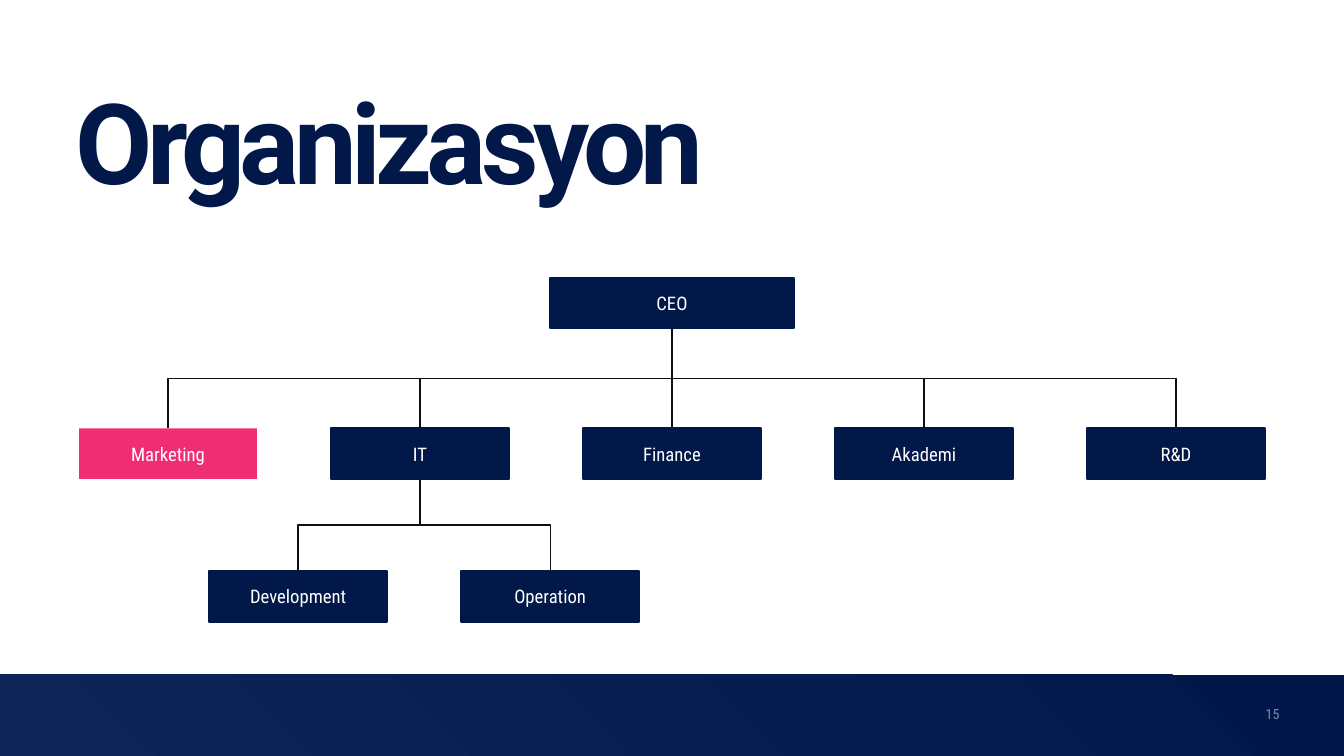
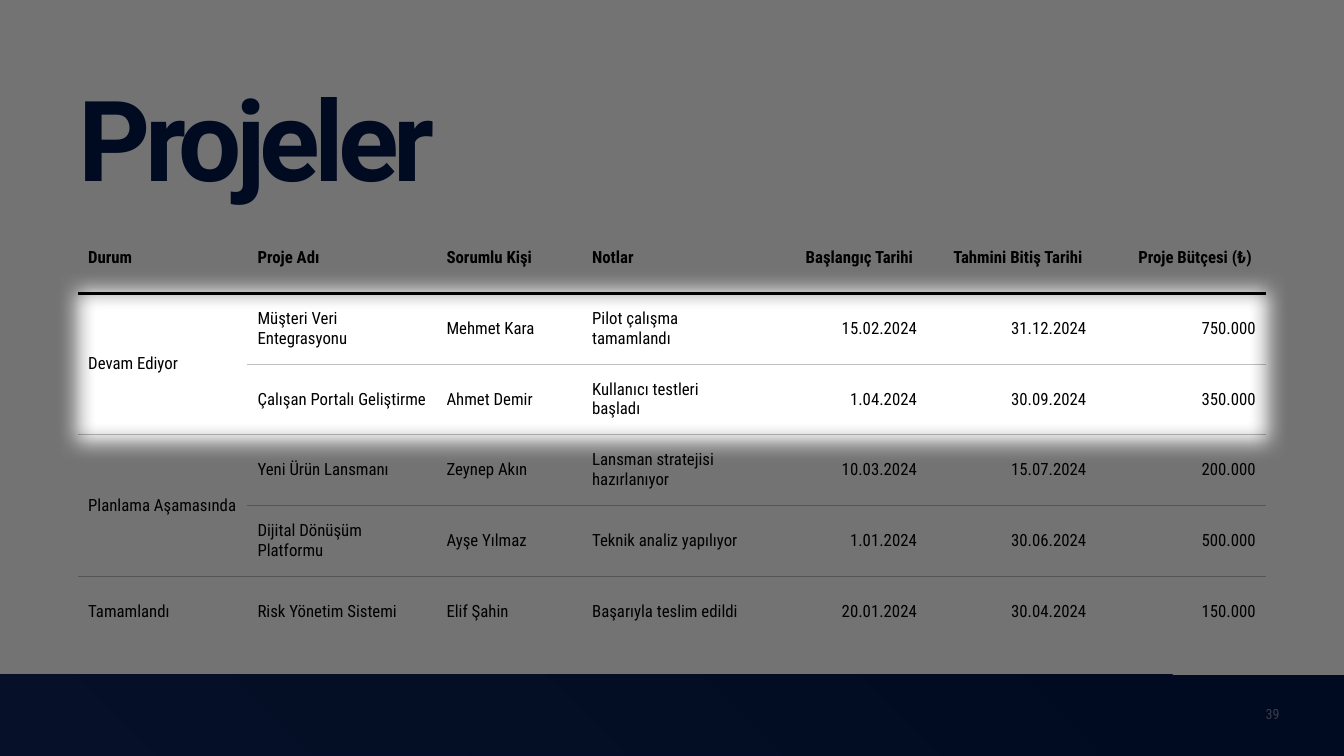
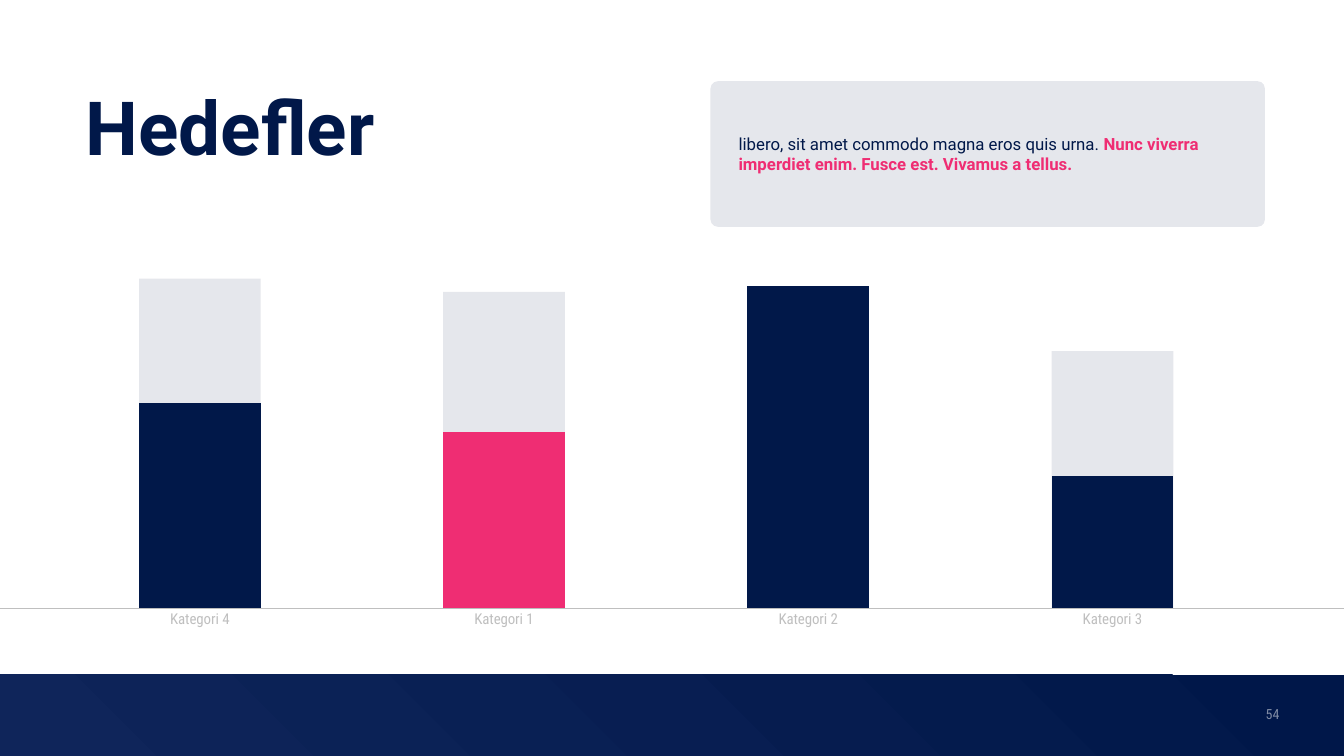
import copy

import pptx
import pptx.chart.data
import pptx.dml.color
import pptx.enum.chart
import pptx.enum.shapes
import pptx.enum.text
import pptx.oxml.ns
import pptx.util
from lxml import etree

PX = 9525
W, H = 1920, 1080
NAVY, NAVY_LINE, PINK, INK = "011849", "001749", "EF2D73", "0C1015"
BLACK, WHITE, GREY = "000000", "FFFFFF", "BFBFBF"
BODY, CONDENSED = "Roboto", "Roboto Condensed"

SHAPE = pptx.enum.shapes.MSO_SHAPE
CONNECTOR = pptx.enum.shapes.MSO_CONNECTOR
ALIGN = pptx.enum.text.PP_ALIGN
ANCHOR = pptx.enum.text.MSO_ANCHOR
NO_TICK = pptx.enum.chart.XL_TICK_MARK.NONE
qn = pptx.oxml.ns.qn

# Organisation: name, parent, left, top, width, fill
BRANCHES = ["Marketing", "IT", "Finance", "Akademi", "R&D"]
TEAMS = ["Development", "Operation"]
BOX_W, BOX_H, BOX_STEP = 254, 72, 360
UNITS = [("CEO", None, 786, 397, 348, NAVY)]
UNITS += [(name, "CEO", 113 + i * BOX_STEP, 612, BOX_W, PINK if name == "Marketing" else NAVY)
          for i, name in enumerate(BRANCHES)]
UNITS += [(name, "IT", 299 + i * BOX_STEP, 816, BOX_W, NAVY) for i, name in enumerate(TEAMS)]

# Projects: an empty status continues the one above
PROJECTS = [
    ("Durum", "Proje Adı", "Sorumlu Kişi", "Notlar",
     "Başlangıç Tarihi ", "Tahmini Bitiş Tarihi ", "Proje Bütçesi (₺) "),
    ("Devam Ediyor", "Müşteri Veri Entegrasyonu", "Mehmet Kara", "Pilot çalışma tamamlandı",
     "15.02.2024", "31.12.2024", "750.000"),
    ("", "Çalışan Portalı Geliştirme", "Ahmet Demir", "Kullanıcı testleri başladı",
     "1.04.2024", "30.09.2024", "350.000"),
    ("Planlama Aşamasında", "Yeni Ürün Lansmanı", "Zeynep Akın", "Lansman stratejisi hazırlanıyor",
     "10.03.2024", "15.07.2024", "200.000"),
    ("", "Dijital Dönüşüm Platformu", "Ayşe Yılmaz", "Teknik analiz yapılıyor",
     "1.01.2024", "30.06.2024", "500.000"),
    ("Tamamlandı", "Risk Yönetim Sistemi", "Elif Şahin", "Başarıyla teslim edildi",
     "20.01.2024", "30.04.2024", "150.000"),
]
COL_WIDTHS = [242, 270, 208, 250, 242, 242, 242]
ROW_H, FIRST_RIGHT_COL = 101, 4
SPOTLIGHT = (140, 444, 1785, 604)
SHADE = (-184, -764, 2048, 1980)
SOFT_EDGE = 28

# Targets: the four categories run on past both edges of the slide
CATEGORIES = ["Kategori 1", "Kategori 2", "Kategori 3", "Kategori 4"]
TARGETS = [96, 56, 78, 100]
RESULTS = [2.4, 4.4, 1.8, 2.8]
TARGET_MAX, RESULT_MAX = 100, 4.5
REPEATS = 3
PINK_POINT = 4
PLOT = {"x": 0.02, "y": 0.11, "w": 0.96, "h": 0.82}
CALLOUT = [("libero, sit amet commodo magna eros quis urna. ", NAVY, False),
           ("Nunc viverra imperdiet enim. Fusce est. Vivamus a tellus.", PINK, True)]


def px(*values):
    return [round(v * PX) for v in values]


def rgb(color):
    return pptx.dml.color.RGBColor.from_string(color)


def paint(fill, color):
    fill.solid()
    fill.fore_color.rgb = rgb(color)


def fade(element, percent):
    """Make every colour inside the element partly transparent."""
    for color in element.xpath(".//a:srgbClr"):
        etree.SubElement(color, qn("a:alpha"), val=str(percent * 1000))


def style(font, size, color, name=CONDENSED, bold=False):
    font.size = pptx.util.Pt(size)
    font.name = name
    font.bold = bold
    font.color.rgb = rgb(color)


def add_run(p, text, *args, **kwargs):
    r = p.add_run()
    r.text = text
    style(r.font, *args, **kwargs)
    return r


def frame(tf, anchor=ANCHOR.MIDDLE, inset=None):
    tf.word_wrap = True
    tf.vertical_anchor = anchor
    if inset is not None:
        tf.margin_left = tf.margin_top = tf.margin_right = tf.margin_bottom = inset * PX
    return tf.paragraphs[0]


def add_box(s, kind, box, color):
    sp = s.shapes.add_shape(kind, *px(*box))
    sp.shadow.inherit = False
    paint(sp.fill, color)
    sp.line.fill.background()
    return sp


def add_band(s):
    """Draw the footer band and hand it to the layout, behind everything."""
    sp = add_box(s, SHAPE.RECTANGLE, (0, 964, W, 116), NAVY_LINE)
    old = sp._element.spPr.find(qn("a:solidFill"))
    grad = etree.Element(qn("a:gradFill"), rotWithShape="1")
    stops = etree.SubElement(grad, qn("a:gsLst"))
    for pos, color in ((0, "0F255A"), (99, NAVY_LINE)):
        stop = etree.SubElement(stops, qn("a:gs"), pos=str(pos * 1000))
        etree.SubElement(stop, qn("a:srgbClr"), val=color)
    circle = etree.SubElement(grad, qn("a:path"), {"path": "circle"})
    etree.SubElement(circle, qn("a:fillToRect"), l="0", t="100000", r="100000", b="0")
    old.getparent().replace(old, grad)
    s.slide_layout.shapes._spTree.insert(2, sp._element)


def add_slide(prs, title, box, number, big=True):
    s = prs.slides.add_slide(prs.slide_layouts[5])
    sp = s.shapes.title
    sp.left, sp.top, sp.width, sp.height = px(*box)
    p = frame(sp.text_frame, ANCHOR.TOP if big else ANCHOR.MIDDLE, 0 if big else None)
    sp.text_frame.auto_size = pptx.enum.text.MSO_AUTO_SIZE.NONE
    p.alignment = ALIGN.LEFT
    r = add_run(p, title, 120 if big else 80, NAVY, BODY, True)
    if big:
        p.line_spacing = pptx.util.Pt(132)
        r.font._element.set("spc", "-600")
    page = s.shapes.add_textbox(*px(1808, 1001, 89, 38))
    r = add_run(frame(page.text_frame, inset=0), str(number), 15, WHITE)
    fade(r._r, 50)
    return s


def link(s, parent, child):
    straight = parent.left + parent.width // 2 == child.left + child.width // 2
    c = s.shapes.add_connector(CONNECTOR.STRAIGHT if straight else CONNECTOR.ELBOW, 0, 0, 0, 0)
    c.begin_connect(parent, 2)
    c.end_connect(child, 0)
    c.line.width = pptx.util.Pt(1.5)
    c.line.color.rgb = rgb(INK)
    etree.SubElement(c._element.spPr, qn("a:effectLst"))
    if straight:
        return
    # Turn the elbow a quarter so that it leaves the parent downwards
    dx, dy = c.end_x - c.begin_x, c.end_y - c.begin_y
    mid_x, mid_y = (c.begin_x + c.end_x) // 2, (c.begin_y + c.end_y) // 2
    c.left, c.top = mid_x - dy // 2, mid_y - abs(dx) // 2
    c.width, c.height = dy, abs(dx)
    xfrm = c._element.spPr.find(qn("a:xfrm"))
    xfrm.set("rot", str((270 if dx > 0 else 90) * 60000))
    xfrm.set("flipH", "1" if dx > 0 else "0")


def add_organisation(s):
    boxes = {}
    for name, _, left, top, width, color in UNITS:
        sp = boxes[name] = add_box(s, SHAPE.RECTANGLE, (left, top, width, BOX_H), color)
        if color == NAVY:
            sp.line.color.rgb = rgb(NAVY_LINE)
            sp.line.width = pptx.util.Pt(2)
        p = frame(sp.text_frame)
        p.alignment = ALIGN.CENTER
        add_run(p, name, 20, WHITE)
    for name, parent, *_ in UNITS:
        if parent:
            link(s, boxes[parent], boxes[name])


def set_borders(cell, **sides):
    tcPr = cell._tc.get_or_add_tcPr()
    for side in "LRTB":
        if side in sides:
            color, width = sides[side]
            ln = etree.SubElement(tcPr, qn("a:ln" + side), w=str(round(width * 12700)))
            fill = etree.SubElement(ln, qn("a:solidFill"))
            etree.SubElement(fill, qn("a:srgbClr"), val=color)


def add_projects(s):
    rows, cols = len(PROJECTS), len(COL_WIDTHS)
    size = px(112, 318, sum(COL_WIDTHS), rows * ROW_H)
    table = s.shapes.add_table(rows, cols, *size).table
    table.first_row = table.horz_banding = False
    for col, width in zip(table.columns, COL_WIDTHS):
        col.width = width * PX
    none, thin, thick = (WHITE, 1), (GREY, 0.5), (BLACK, 3)
    rules = [none, thick] + [thin] * (rows - 2) + [none]
    for i, row in enumerate(PROJECTS):
        table.rows[i].height = ROW_H * PX
        for j, text in enumerate(row):
            cell = table.cell(i, j)
            set_borders(cell, L=none, R=none, T=rules[i], B=rules[i + 1])
            cell.fill.background()
            cell.vertical_anchor = ANCHOR.MIDDLE
            cell.margin_left = cell.margin_right = cell.margin_top = cell.margin_bottom = 14 * PX
            if text:
                p = cell.text_frame.paragraphs[0]
                p.alignment = ALIGN.RIGHT if j >= FIRST_RIGHT_COL else ALIGN.LEFT
                add_run(p, text, 18, BLACK, bold=i == 0)
        if not row[0]:
            table.cell(i - 1, 0).merge(table.cell(i, 0))


def add_spotlight(s):
    """Shade the slide except for a soft-edged window."""
    l, t, r, b = SPOTLIGHT
    x1, y1, x2, y2 = SHADE
    builder = s.shapes.build_freeform(l, t, scale=PX)
    builder.add_line_segments([(l, b), (r, b), (r, t)], close=True)
    builder.move_to(x1, y1)
    builder.add_line_segments([(x2, y1), (x2, y2), (x1, y2)], close=True)
    sp = builder.convert_to_shape()
    sp.shadow.inherit = False
    paint(sp.fill, BLACK)
    fade(sp._element.spPr, 55)
    sp.line.fill.background()
    effects = sp._element.spPr.find(qn("a:effectLst"))
    etree.SubElement(effects, qn("a:softEdge"), rad=str(SOFT_EDGE * PX))


def split_axes(plot_area):
    """Move the second series to a value axis of its own."""
    bars = plot_area.find(qn("c:barChart"))
    front = copy.deepcopy(bars)
    bars.remove(bars.findall(qn("c:ser"))[1])
    front.remove(front.findall(qn("c:ser"))[0])
    bars.addnext(front)
    cat, val = axes = [copy.deepcopy(a) for a in plot_area.xpath("c:catAx | c:valAx")]
    plot_area.xpath("c:valAx")[-1].addnext(val)
    val.addnext(cat)
    ids = {a.find(qn("c:axId")).get("val"): str(n) for n, a in enumerate(axes, 101)}
    for part in [front] + axes:
        for ref in part.xpath("c:axId | c:crossAx"):
            ref.set("val", ids[ref.get("val")])
    cat.find(qn("c:delete")).set("val", "1")
    val.xpath("c:scaling/c:max")[0].set("val", str(RESULT_MAX))
    val.find(qn("c:axPos")).set("val", "r")
    val.find(qn("c:crosses")).set("val", "max")


def place_plot(plot_area):
    for old in plot_area.findall(qn("c:layout")):
        plot_area.remove(old)
    layout = etree.Element(qn("c:layout"))
    manual = etree.SubElement(layout, qn("c:manualLayout"))
    settings = {"layoutTarget": "inner", "xMode": "edge", "yMode": "edge", **PLOT}
    for tag, value in settings.items():
        etree.SubElement(manual, qn("c:" + tag), val=str(value))
    plot_area.insert(0, layout)


def add_targets(s):
    data = pptx.chart.data.CategoryChartData()
    data.categories = CATEGORIES * REPEATS
    data.add_series("Series 1", TARGETS * REPEATS)
    data.add_series("Series 2", RESULTS * REPEATS)
    kind = pptx.enum.chart.XL_CHART_TYPE.COLUMN_CLUSTERED
    chart = s.shapes.add_chart(kind, *px(-1344, 335, 5432, 574), data).chart
    style(chart.font, 16, BLACK)
    chart.has_legend = chart.has_title = False
    plot = chart.plots[0]
    plot.gap_width, plot.overlap, plot.vary_by_categories = 150, 100, False
    targets, results = plot.series
    for series in (targets, results):
        paint(series.format.fill, NAVY)
    fade(targets._element, 10)
    paint(results.points[PINK_POINT].format.fill, PINK)

    cat, val = chart.category_axis, chart.value_axis
    for axis in (cat, val):
        axis.major_tick_mark = axis.minor_tick_mark = NO_TICK
    cat.format.line.color.rgb = rgb(GREY)
    cat.format.line.width = pptx.util.Pt(0.75)
    style(cat.tick_labels.font, 16, GREY)
    # A bare value axis keeps its scale, which a deleted one may lose
    val.has_major_gridlines = False
    val.minimum_scale, val.maximum_scale = 0, TARGET_MAX
    val.tick_label_position = pptx.enum.chart.XL_TICK_LABEL_POSITION.NONE
    val.format.line.fill.background()
    plot_area = chart.element.xpath("c:chart/c:plotArea")[0]
    split_axes(plot_area)
    place_plot(plot_area)


def add_callout(s):
    sp = add_box(s, SHAPE.ROUNDED_RECTANGLE, (1015, 116, 792, 208), NAVY)
    sp.adjustments[0] = 0.05
    fade(sp._element.spPr, 10)
    p = frame(sp.text_frame, inset=37)
    p.alignment = ALIGN.LEFT
    for text, color, bold in CALLOUT:
        add_run(p, text, 18, color, BODY, bold)


def main():
    prs = pptx.Presentation()
    prs.slide_width, prs.slide_height = px(W, H)

    s = add_slide(prs, "Organizasyon", (108, 119, 1704, 181), 15)
    add_band(s)
    add_organisation(s)

    s = add_slide(prs, "Projeler", (112, 116, 1704, 178), 39)
    add_projects(s)
    add_spotlight(s)

    s = add_slide(prs, "Hedefler", (113, 119, 575, 120), 54, big=False)
    add_targets(s)
    add_callout(s)

    prs.save("out.pptx")


if __name__ == "__main__":
    main()
